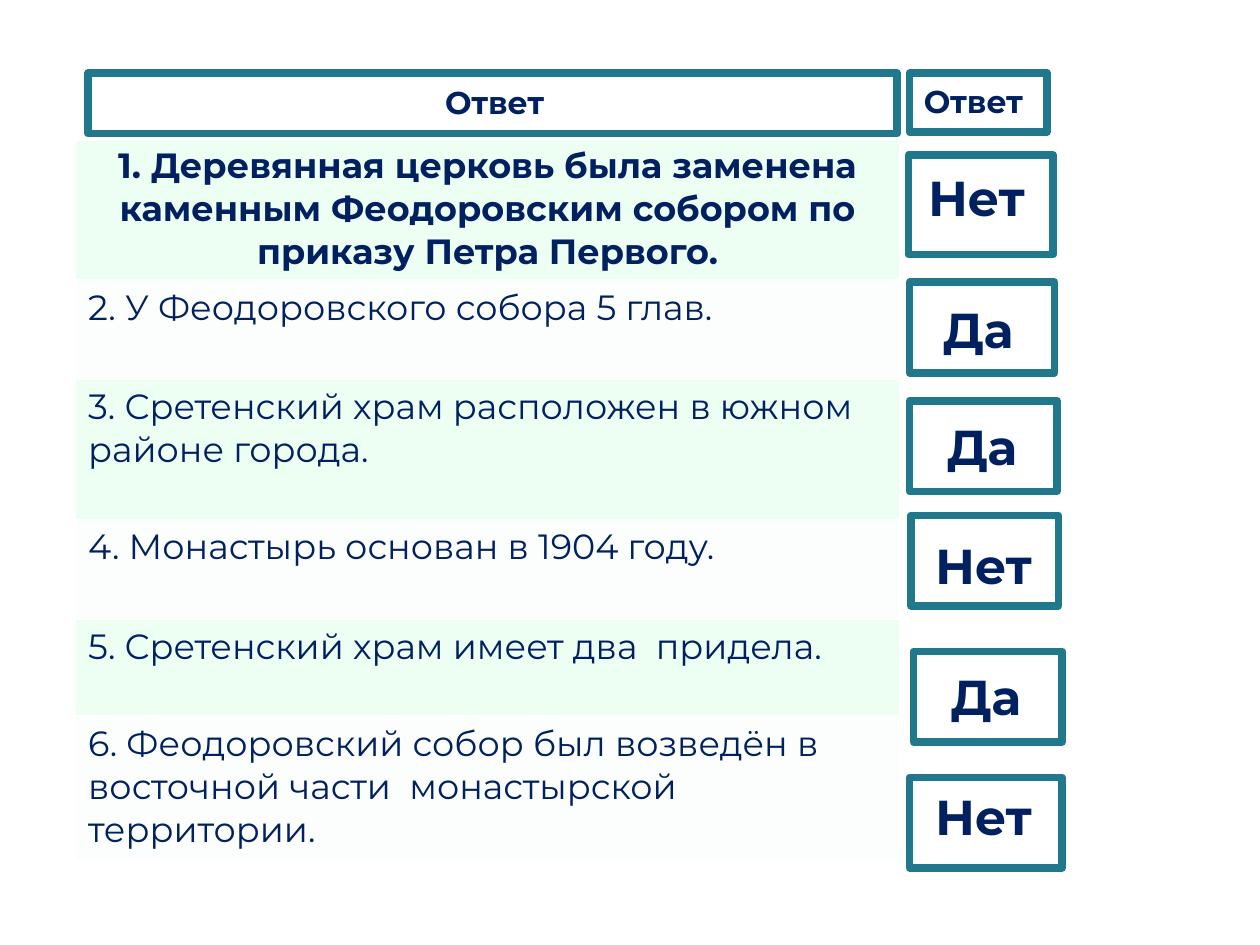
from lxml import etree
from pptx import Presentation
from pptx import util as u
from pptx.dml import color
from pptx.enum import shapes, text
from pptx.oxml import ns

COLORS = {"navy": "002060", "teal": "21788D", "mint": "CEFEDD", "white": "FFFFFF"}
FONT = "Montserrat"
STATEMENTS = [
    ("1. Деревянная церковь была заменена каменным Феодоровским собором по приказу Петра Первого.", 80.6, 35),
    ("2. У Феодоровского собора 5 глав.", 56.9, 8),
    ("3. Сретенский храм расположен в южном  районе города.", 80, 36),
    ("4. Монастырь основан в 1904 году.", 57, 8),
    ("5. Сретенский храм имеет два  придела.", 55.5, 35),
    ("6. Феодоровский собор был возведён в  восточной части  монастырской территории.", 82, 8),
]
HEADER_HEIGHT = 41.8
FRAMES = [
    (519.1, 88.6, 82.8, 56.9),
    (519.8, 161.3, 82.8, 51.8),
    (519.8, 229, 84.2, 51.8),
    (520.6, 294.5, 84.2, 51.8),
    (522, 372.2, 85, 51.8),
    (519.8, 444.2, 87.1, 51.8),
    (519.8, 41.8, 78.5, 33.8),
    (50.4, 41.8, 462.2, 34.6),
]
LABELS = [
    ("Ответ", 18, (520.6, 43.2, 71.3, 28.8)),
    ("Нет", 28, (480.2, 92.2, 155.5, 41)),
    ("Да", 28, (530.6, 167.8, 56.9, 41)),
    ("Да", 28, (532.8, 234.7, 56.9, 41)),
    ("Нет", 28, (526.3, 302.4, 71.3, 41)),
    ("Да", 28, (535, 377.3, 56.9, 41)),
    ("Нет", 28, (526.3, 445.7, 71.3, 41)),
    ("Ответ", 18, (247, 43.9, 71.3, 28.8)),
]


def rgb(name):
    """Return the named colour."""
    return color.RGBColor.from_string(COLORS[name])


def points(box):
    """Convert a box of numbers to lengths in points."""
    return [u.Pt(value) for value in box]


def write(text_frame, content, size, bold, alignment):
    """Set one formatted paragraph in a text frame."""
    text_frame.text = content
    paragraph = text_frame.paragraphs[0]
    paragraph.alignment = alignment
    for run in paragraph.runs:
        run.font.name = FONT
        run.font.size = u.Pt(size)
        run.font.bold = bold
        run.font.color.rgb = rgb("navy")


def add_borders(cell, bottom_width):
    """Draw white borders around a table cell."""
    properties = cell._tc.get_or_add_tcPr()
    for index, side in enumerate("LRTB"):
        line = etree.Element(ns.qn("a:ln" + side))
        line.set("w", str(u.Pt(bottom_width if side == "B" else 1)))
        fill = etree.SubElement(line, ns.qn("a:solidFill"))
        etree.SubElement(fill, ns.qn("a:srgbClr")).set("val", COLORS["white"])
        properties.insert(index, line)


def tint(cell, opacity):
    """Fill a cell with translucent mint, opacity in percent."""
    cell.fill.solid()
    cell.fill.fore_color.rgb = rgb("mint")
    tone = cell._tc.tcPr.find(".//" + ns.qn("a:srgbClr"))
    etree.SubElement(tone, ns.qn("a:alpha")).set("val", str(opacity * 1000))


def add_statements(slide):
    """Add the table of statements below an empty header row."""
    heights = [HEADER_HEIGHT] + [height for _, height, _ in STATEMENTS]
    box = points((43.2, 37.4, 470.9, sum(heights)))
    table = slide.shapes.add_table(len(heights), 1, *box).table
    table.first_row = table.horz_banding = False
    for row, height in zip(table.rows, heights):
        row.height = u.Pt(height)
    header = table.cell(0, 0)
    header.fill.background()
    add_borders(header, 3)
    for number, (content, _, opacity) in enumerate(STATEMENTS, 1):
        cell = table.cell(number, 0)
        first = number == 1
        alignment = text.PP_ALIGN.CENTER if first else text.PP_ALIGN.LEFT
        write(cell.text_frame, content, 20, first, alignment)
        tint(cell, opacity)
        add_borders(cell, 1)


def add_frame(slide, box):
    """Add an unfilled teal frame with rounded line joins."""
    shape = slide.shapes.add_shape(shapes.MSO_SHAPE.RECTANGLE, *points(box))
    shape.shadow.inherit = False
    shape.fill.background()
    shape.line.color.rgb = rgb("teal")
    shape.line.width = u.Pt(4.33)
    etree.SubElement(shape.line._get_or_add_ln(), ns.qn("a:round"))


def add_label(slide, content, size, box):
    """Add a bold centred label."""
    text_frame = slide.shapes.add_textbox(*points(box)).text_frame
    text_frame.word_wrap = False
    text_frame.auto_size = text.MSO_AUTO_SIZE.SHAPE_TO_FIT_TEXT
    write(text_frame, content, size, True, text.PP_ALIGN.CENTER)


def main():
    """Build and save the slide."""
    presentation = Presentation()
    presentation.slide_width, presentation.slide_height = u.Pt(720), u.Pt(540)
    slide = presentation.slides.add_slide(presentation.slide_layouts[6])
    add_statements(slide)
    for box in FRAMES:
        add_frame(slide, box)
    for content, size, box in LABELS:
        add_label(slide, content, size, box)
    presentation.save("out.pptx")


if __name__ == "__main__":
    main()
